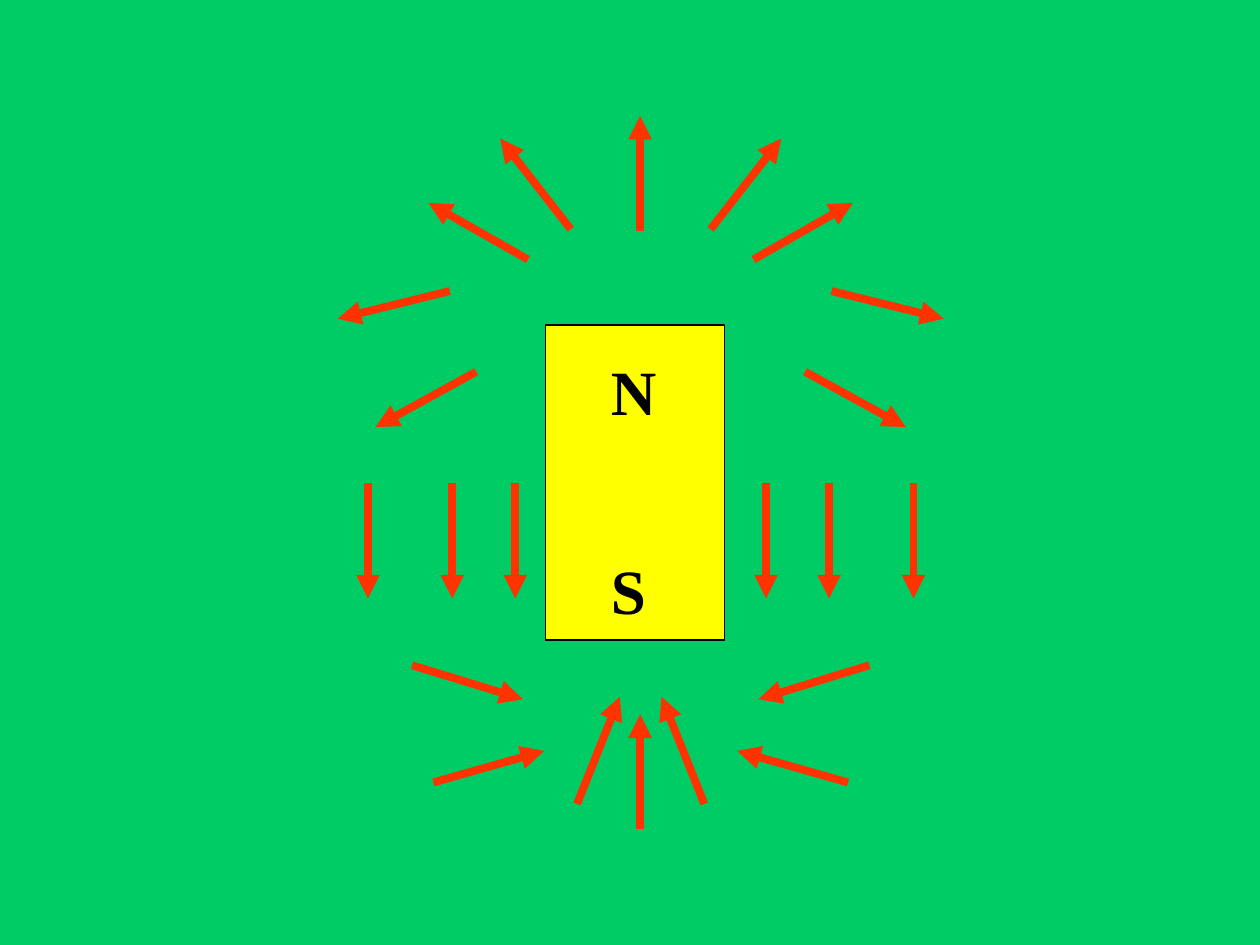
from lxml import etree
from pptx import Presentation
from pptx.dml.color import RGBColor
from pptx.enum.shapes import MSO_CONNECTOR, MSO_SHAPE
from pptx.enum.text import MSO_AUTO_SIZE
from pptx.oxml.ns import qn
from pptx.util import Inches, Pt

STRAIGHT = MSO_CONNECTOR.STRAIGHT
RECTANGLE = MSO_SHAPE.RECTANGLE
GROW = MSO_AUTO_SIZE.SHAPE_TO_FIT_TEXT

COLORS = {
    "background": "00CC66",
    "magnet": "FFFF00",
    "ink": "000000",
    "field": "FF3300",
}
FONT = "Times New Roman"
AXIS = 5.08
MIRROR_SUM = 10.17
SIDE_TOP, SIDE_BOTTOM = 3.83, 4.75
SIDE_COLUMNS = (6.08, 6.58, 7.25)

AXIS_ARROWS = [(AXIS, 1.83, AXIS, 0.92), (AXIS, 6.58, AXIS, 5.67)]
RIGHT_ARROWS = [
    (5.64, 1.82, 6.20, 1.10),
    (5.98, 2.06, 6.77, 1.61),
    (6.60, 2.31, 7.49, 2.53),
    (6.39, 2.95, 7.19, 3.39),
    (6.90, 5.28, 6.02, 5.55),
    (6.73, 6.21, 5.85, 5.96),
    (5.59, 6.38, 5.25, 5.53),
] + [(x, SIDE_TOP, x, SIDE_BOTTOM) for x in SIDE_COLUMNS]


def color(name):
    return RGBColor.from_string(COLORS[name])


def add_magnet(slide):
    magnet = slide.shapes.add_shape(
        RECTANGLE, Inches(4.33), Inches(2.58), Inches(1.42), Inches(2.5))
    magnet.shadow.inherit = False
    magnet.fill.solid()
    magnet.fill.fore_color.rgb = color("magnet")
    magnet.line.color.rgb = color("ink")
    magnet.line.width = Pt(1)


def add_pole(slide, letter, top):
    pole = slide.shapes.add_textbox(
        Inches(4.75), Inches(top), Inches(1), Inches(0.7))
    frame = pole.text_frame
    frame.word_wrap = True
    frame.auto_size = GROW
    paragraph = frame.paragraphs[0]
    paragraph.text = letter
    paragraph.space_before = Pt(4)
    paragraph.font.name = FONT
    paragraph.font.size = Pt(36)
    paragraph.font.bold = True
    paragraph.font.color.rgb = color("ink")


def add_field_arrow(slide, x1, y1, x2, y2):
    arrow = slide.shapes.add_connector(
        STRAIGHT, Inches(x1), Inches(y1), Inches(x2), Inches(y2))
    arrow.line.color.rgb = color("field")
    arrow.line.width = Pt(4.5)
    etree.SubElement(arrow.line._get_or_add_ln(), qn("a:tailEnd"), type="triangle")
    etree.SubElement(arrow._element.spPr, qn("a:effectLst"))


def main():
    prs = Presentation()
    prs.slide_width = Inches(10)
    prs.slide_height = Inches(7.5)
    slide = prs.slides.add_slide(prs.slide_layouts[6])
    slide.background.fill.solid()
    slide.background.fill.fore_color.rgb = color("background")

    add_magnet(slide)
    add_pole(slide, "N", 2.75)
    add_pole(slide, "S", 4.33)
    for ends in AXIS_ARROWS:
        add_field_arrow(slide, *ends)
    for x1, y1, x2, y2 in RIGHT_ARROWS:
        add_field_arrow(slide, x1, y1, x2, y2)
        add_field_arrow(slide, MIRROR_SUM - x1, y1, MIRROR_SUM - x2, y2)

    prs.save("out.pptx")


if __name__ == "__main__":
    main()
